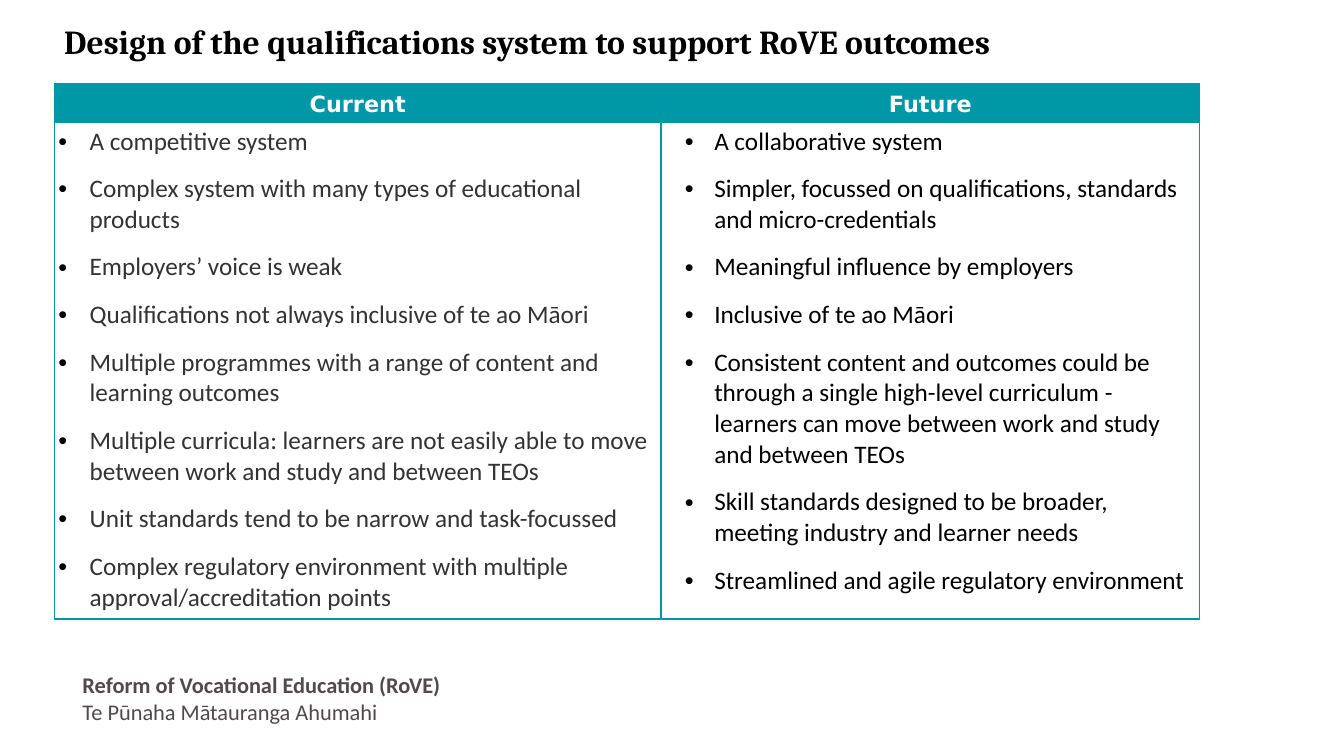
from lxml import etree
from pptx import Presentation
from pptx.dml.color import RGBColor
from pptx.enum import text
from pptx.oxml import ns
from pptx.util import Cm, Pt

COLORS = {"teal": "0097A7", "white": "FFFFFF", "black": "000000",
          "charcoal": "333333", "footer": "51494E"}

CURRENT = [
    "A competitive system",
    "Complex system with many types of educational products",
    "Employers’ voice is weak",
    "Qualifications not always inclusive of te ao Māori",
    "Multiple programmes with a range of content and learning outcomes",
    "Multiple curricula: learners are not easily able to move between work and study and between TEOs",
    "Unit standards tend to be narrow and task-focussed",
    "Complex regulatory environment with multiple approval/accreditation points",
]
FUTURE = [
    "A collaborative system",
    "Simpler, focussed on qualifications, standards and micro-credentials",
    "Meaningful influence by employers",
    "Inclusive of te ao Māori",
    "Consistent content and outcomes could be through a single high-level curriculum - "
    "learners can move between work and study and between TEOs",
    "Skill standards designed to be broader, meeting industry and learner needs",
    "Streamlined and agile regulatory environment",
]


def write(frame, lines, size, font, color, bold=False, align=None, spacing=None,
          before=None, after=None, bullet=None):
    """Fill a text frame, one paragraph a line; bullet is (margin, hanging) in cm."""
    for i, line in enumerate(lines):
        paragraph = frame.paragraphs[0] if i == 0 else frame.add_paragraph()
        if bullet:
            margin, hanging = bullet
            props = paragraph._p.get_or_add_pPr()
            props.set("marL", str(Cm(margin)))
            props.set("indent", str(-Cm(hanging)))
            bullet_color = etree.SubElement(props, ns.qn("a:buClr"))
            etree.SubElement(bullet_color, ns.qn("a:srgbClr"), val=COLORS["black"])
            etree.SubElement(props, ns.qn("a:buFont"), typeface="Arial")
            etree.SubElement(props, ns.qn("a:buChar"), char="•")
        paragraph.alignment = align
        paragraph.line_spacing = spacing
        if before and i:
            paragraph.space_before = Pt(before)
        if after:
            paragraph.space_after = Pt(after)
        run = paragraph.add_run()
        run.text = line
        run.font.size = Pt(size)
        run.font.name = font
        run.font.bold = bold
        run.font.color.rgb = RGBColor.from_string(COLORS[color])


def style_cell(cell, fill, inset):
    """Set the insets, the teal borders and the fill of a table cell."""
    cell.margin_left = cell.margin_right = cell.margin_top = cell.margin_bottom = Cm(inset)
    props = cell._tc.get_or_add_tcPr()
    for side in ("lnL", "lnR", "lnT", "lnB"):
        line = etree.SubElement(props, ns.qn(f"a:{side}"), w=str(Pt(1)))
        solid = etree.SubElement(line, ns.qn("a:solidFill"))
        etree.SubElement(solid, ns.qn("a:srgbClr"), val=COLORS["teal"])
    cell.fill.solid()
    cell.fill.fore_color.rgb = RGBColor.from_string(COLORS[fill])


deck = Presentation()
deck.slide_width, deck.slide_height = Cm(33.87), Cm(19.05)
slide = deck.slides.add_slide(deck.slide_layouts[6])

# Footer
footer = slide.shapes.add_textbox(Cm(2.08), Cm(16.92), Cm(17.7), Cm(1.57)).text_frame
footer.word_wrap = True
footer.margin_left = footer.margin_right = footer.margin_top = footer.margin_bottom = 0
write(footer, ["Reform of Vocational Education (RoVE)", "Te Pūnaha Mātauranga Ahumahi"],
      16, "Calibri", "footer")
footer.paragraphs[0].runs[0].font.bold = True

# Comparison table
comparison = slide.shapes.add_table(2, 2, Cm(1.37), Cm(2.11), Cm(28.86), Cm(13.39)).table
comparison.rows[0].height, comparison.rows[1].height = Cm(0.87), Cm(12.52)
columns = [
    ("Current", CURRENT, 15.29, "charcoal", (0.79, 0.79)),
    ("Future", FUTURE, 13.57, "black", (1.24, 0.74)),
]
for col, (heading, points, width, color, bullet) in enumerate(columns):
    comparison.columns[col].width = Cm(width)
    heading_cell, points_cell = comparison.cell(0, col), comparison.cell(1, col)
    style_cell(heading_cell, "teal", 0.08)
    style_cell(points_cell, "white", 0.1)
    write(heading_cell.text_frame, [heading], 16, "DejaVu Sans", "white", bold=True,
          align=text.PP_ALIGN.CENTER, spacing=1.19, after=6)
    write(points_cell.text_frame, points, 18, "Calibri", color,
          before=6, after=6, bullet=bullet)

# Title
title = slide.shapes.add_textbox(Cm(1.37), Cm(0.41), Cm(28.27), Cm(1.27)).text_frame
title.word_wrap = True
title.auto_size = text.MSO_AUTO_SIZE.SHAPE_TO_FIT_TEXT
write(title, ["Design of the qualifications system to support RoVE outcomes"],
      24, "Cambria", "black", bold=True)

deck.save("out.pptx")
